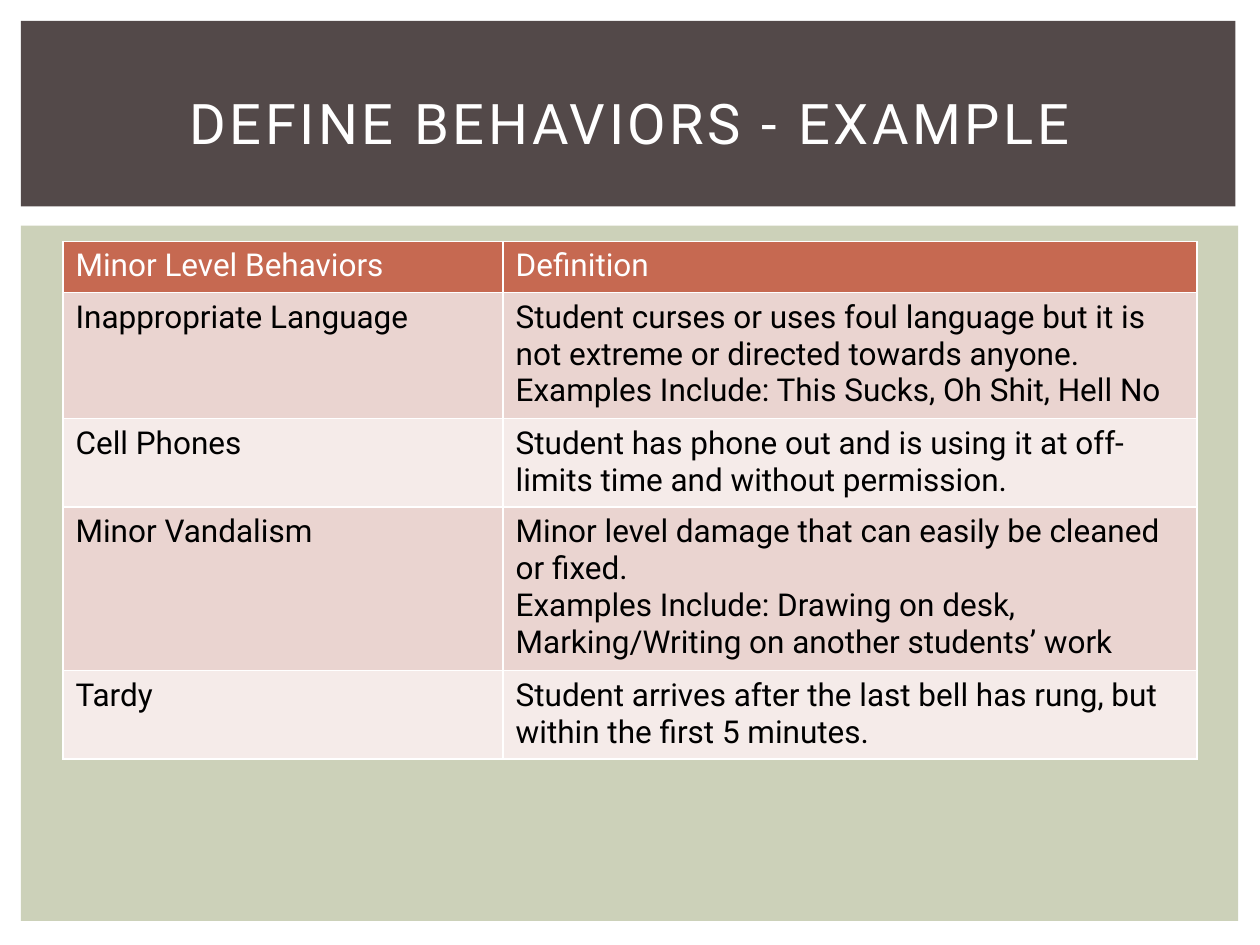
import dataclasses

import lxml.etree
import pptx
import pptx.dml.color
import pptx.enum.shapes
import pptx.enum.text
import pptx.oxml.ns
import pptx.util

Pt = pptx.util.Pt
qn = pptx.oxml.ns.qn


@dataclasses.dataclass(frozen=True)
class Theme:
    font: str = "Roboto"
    title_size: int = 32
    body_size: int = 18
    white: str = "FFFFFF"
    black: str = "000000"
    banner: str = "534949"
    panel: str = "CCD1B9"
    header: str = "C66951"
    bands: tuple = ("EAD4D0", "F5EBE9")


def rgb(color):
    return pptx.dml.color.RGBColor.from_string(color)


class SlideBuilder:
    def __init__(self, slide, theme):
        self.s = slide
        self.theme = theme

    def format_text(self, tf, size, color):
        for p in tf.paragraphs:
            for r in p.runs:
                r.font.name = self.theme.font
                r.font.size = Pt(size)
                r.font.bold = False
                r.font.color.rgb = rgb(color)

    def rect(self, x, y, w, h, color):
        sp = self.s.shapes.add_shape(
            pptx.enum.shapes.MSO_SHAPE.RECTANGLE, Pt(x), Pt(y), Pt(w), Pt(h))
        sp.shadow.inherit = False
        sp.fill.solid()
        sp.fill.fore_color.rgb = rgb(color)
        sp.line.fill.background()

    def title(self, x, y, w, h, text, spacing):
        sp = self.s.shapes.add_textbox(Pt(x), Pt(y), Pt(w), Pt(h))
        tf = sp.text_frame
        tf.word_wrap = True
        tf.vertical_anchor = pptx.enum.text.MSO_ANCHOR.MIDDLE
        tf.text = text
        p = tf.paragraphs[0]
        p.alignment = pptx.enum.text.PP_ALIGN.CENTER
        self.format_text(tf, self.theme.title_size, self.theme.white)
        p.runs[0].font._element.set("spc", str(spacing * 100))

    def borders(self, cell, color, width):
        tc_pr = cell._tc.get_or_add_tcPr()
        for i, side in enumerate(("lnL", "lnR", "lnT", "lnB")):
            ln = lxml.etree.Element(qn(f"a:{side}"), w=str(Pt(width)))
            fill = lxml.etree.SubElement(ln, qn("a:solidFill"))
            lxml.etree.SubElement(fill, qn("a:srgbClr"), val=color)
            tc_pr.insert(i, ln)

    def table(self, x, y, col_widths, row_heights, rows):
        table = self.s.shapes.add_table(
            len(rows), len(col_widths), Pt(x), Pt(y),
            Pt(sum(col_widths)), Pt(sum(row_heights))).table
        for col, width in zip(table.columns, col_widths):
            col.width = Pt(width)
        for i, (height, texts) in enumerate(zip(row_heights, rows)):
            table.rows[i].height = Pt(height)
            fill = self.theme.bands[(i - 1) % 2] if i else self.theme.header
            color = self.theme.black if i else self.theme.white
            for j, text in enumerate(texts):
                cell = table.cell(i, j)
                cell.text_frame.text = text
                self.format_text(cell.text_frame, self.theme.body_size, color)
                cell.fill.solid()
                cell.fill.fore_color.rgb = rgb(fill)
                self.borders(cell, self.theme.white, 1)


def main():
    prs = pptx.Presentation()
    prs.slide_width, prs.slide_height = Pt(720), Pt(540)
    theme = Theme()
    builder = SlideBuilder(prs.slides.add_slide(prs.slide_layouts[6]), theme)

    builder.rect(12, 128.9, 695.5, 397.4, theme.panel)
    builder.rect(12, 12, 694, 106, theme.banner)
    behaviors = [
        ("Minor Level Behaviors", "Definition"),
        ("Inappropriate Language",
         "Student curses or uses foul language but it is not extreme or "
         "directed towards anyone.\n"
         "Examples Include: This Sucks, Oh Shit, Hell No"),
        ("Cell Phones",
         "Student has phone out and is using it at off-limits time and "
         "without permission."),
        ("Minor Vandalism",
         "Minor level damage that can easily be cleaned or fixed.\n"
         "Examples Include: Drawing on desk, Marking/Writing on another "
         "students’ work"),
        ("Tardy",
         "Student arrives after the last bell has rung, but within the "
         "first 5 minutes."),
    ]
    builder.table(36, 138, (251.5, 396.5), (29.2, 72, 50.4, 93.6, 50.4), behaviors)
    builder.title(30, 28, 660, 83, "DEFINE BEHAVIORS - EXAMPLE", 2)
    prs.save("out.pptx")


if __name__ == "__main__":
    main()
